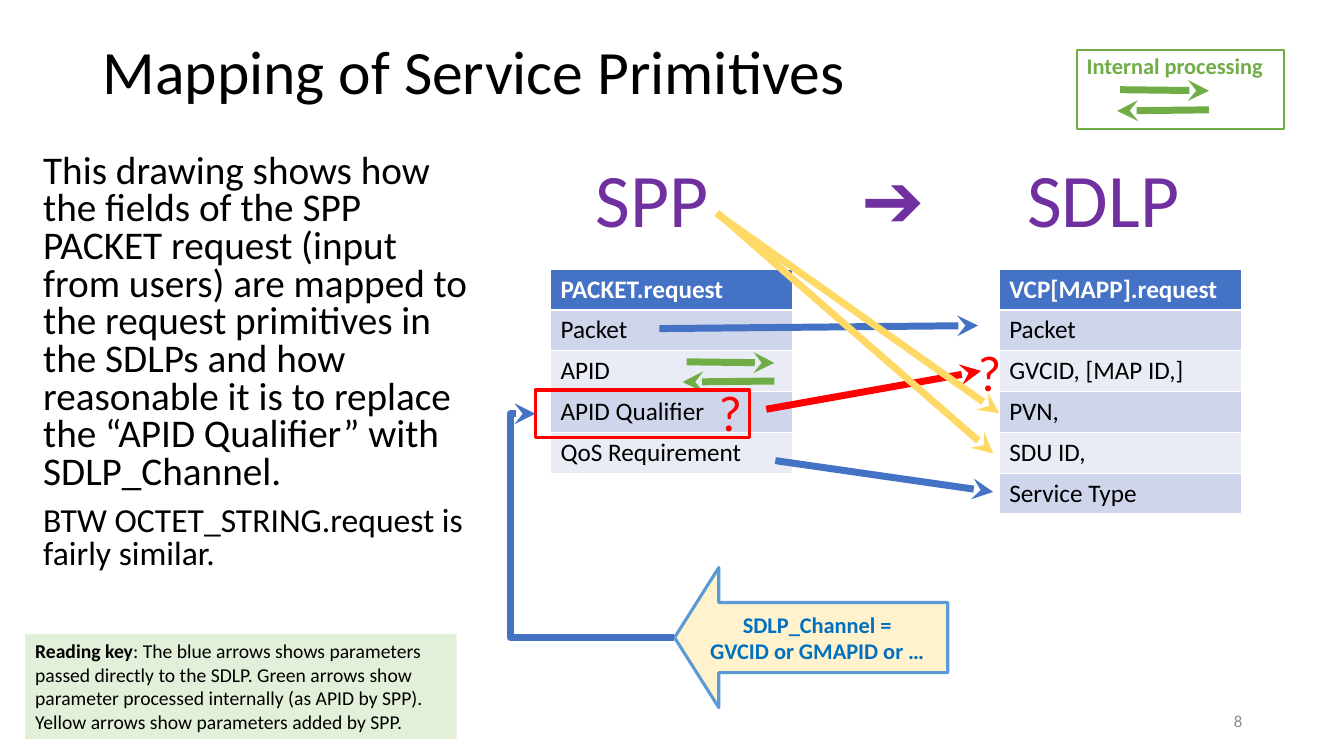
from lxml import etree
from pptx import Presentation
from pptx.dml.color import RGBColor
from pptx.enum.shapes import MSO_CONNECTOR, MSO_SHAPE
from pptx.enum.text import MSO_ANCHOR, PP_ALIGN
from pptx.oxml.ns import qn
from pptx.util import Inches, Pt

STRAIGHT, ELBOW = MSO_CONNECTOR.STRAIGHT, MSO_CONNECTOR.ELBOW
RECT, ARROW = MSO_SHAPE.RECTANGLE, MSO_SHAPE.LEFT_ARROW
TOP, MIDDLE = MSO_ANCHOR.TOP, MSO_ANCHOR.MIDDLE
LEFT, CENTER, RIGHT = PP_ALIGN.LEFT, PP_ALIGN.CENTER, PP_ALIGN.RIGHT

HEX = {
    "black": "000000", "white": "FFFFFF", "gray": "8C8C8C",
    "blue": "4472C4", "green": "70AD47", "red": "FF0000",
    "yellow": "FFD966", "purple": "7030A0", "sky": "0070C0",
    "edge": "5B9BD5", "cream": "FFF2CC", "mint": "E2F0D9",
    "dark": "CFD5EA", "pale": "E9EBF5",
}

# Content
TITLE = "Mapping of Service Primitives"
BODY = [
    ("This drawing shows how the fields of the SPP PACKET request (input from "
     "users) are mapped to the request primitives in the SDLPs and how "
     "reasonable it is to replace the “APID Qualifier” with SDLP_Channel.",
     {"size": 28}),
    ("BTW OCTET_STRING.request is fairly similar.", {"size": 24}),
]
HEADS = "SPP\t➔\tSDLP"
STOPS = [2.64, 4.28]
TABLES = [
    (5.46, ["PACKET.request", "Packet", "APID", "APID Qualifier",
            "QoS Requirement"]),
    (9.91, ["VCP[MAPP].request", "Packet", "GVCID, [MAP ID,]", "PVN,",
            "SDU ID,", "Service Type"]),
]
ARROWS = [
    ("blue", (6.54, 3.26), (9.7, 3.23)),
    ("blue", (7.69, 4.57), (9.85, 4.88)),
    ("green", (6.81, 3.59), (7.68, 3.6)),
    ("green", (7.68, 3.78), (6.77, 3.79)),
    ("red", (7.6, 4.06), (9.73, 3.68)),
    ("yellow", (7.11, 2.12), (9.91, 4.1)),
    ("yellow", (7.11, 2.11), (9.85, 4.5)),
]
LEGEND = [
    ("green", (11.11, 0.89), (11.99, 0.9)),
    ("green", (11.99, 1.09), (11.08, 1.1)),
]
MARKS = [(9.6, 3.4), (7.03, 3.8)]
CHANNEL = ["SDLP_Channel =", "GVCID or GMAPID or …"]
KEY = [
    ("Reading key", {"bold": True}),
    (": The blue arrows shows parameters passed directly to the SDLP. Green "
     "arrows show parameter processed internally (as APID by SPP). Yellow "
     "arrows show parameters added by SPP.", {}),
]
ROW = 0.405

deck = Presentation()
deck.slide_width, deck.slide_height = Inches(13.33), Inches(7.5)
slide = deck.slides.add_slide(deck.slide_layouts[6])
shapes = slide.shapes


def color(name):
    return RGBColor.from_string(HEX[name])


def write(para, text, size=18, hue="black", bold=False, align=LEFT,
          lead=None, gap=None):
    run = para.add_run()
    run.text = text
    run.font.name = "Calibri"
    run.font.size = Pt(size)
    run.font.bold = bold
    run.font.color.rgb = color(hue)
    para.alignment = align
    if lead:
        para.line_spacing = lead
    if gap:
        para.space_before = Pt(gap)


def fill_frame(shape, lines, anchor=TOP, **style):
    frame = shape.text_frame
    frame.word_wrap = True
    frame.vertical_anchor = anchor
    for i, (text, extra) in enumerate(lines):
        para = frame.add_paragraph() if i else frame.paragraphs[0]
        write(para, text, **{**style, **extra})
    return frame


def label(box, lines, **style):
    return fill_frame(shapes.add_textbox(*map(Inches, box)), lines, **style)


def block(kind, box, fill=None, edge=None, width=1):
    shape = shapes.add_shape(kind, *map(Inches, box))
    shape.shadow.inherit = False
    if fill:
        shape.fill.solid()
        shape.fill.fore_color.rgb = color(fill)
    else:
        shape.fill.background()
    if edge:
        shape.line.color.rgb = color(edge)
        shape.line.width = Pt(width)
    else:
        shape.line.fill.background()
    return shape


def link(hue, start, end, kind=STRAIGHT):
    line = shapes.add_connector(kind, *map(Inches, start + end))
    line.line.color.rgb = color(hue)
    line.line.width = Pt(5)
    etree.SubElement(line.line._get_or_add_ln(), qn("a:tailEnd"),
                     type="stealth")
    etree.SubElement(line._element.spPr, qn("a:effectLst"))
    return line


# Title and body
label((0.92, 0.01, 11.5, 1.45), [(TITLE, {})], anchor=MIDDLE, size=44,
      lead=0.9)
label((0.33, 1.48, 4.55, 4.73), BODY, lead=0.8, gap=10)

# Field tables
for left, rows in TABLES:
    grid = shapes.add_table(len(rows), 1, Inches(left), Inches(2.67),
                            Inches(2.4), Inches(ROW * len(rows))).table
    for i, text in enumerate(rows):
        grid.rows[i].height = Inches(ROW)
        cell = grid.cell(i, 0)
        cell.fill.solid()
        shade = ("dark" if i % 2 else "pale") if i else "blue"
        cell.fill.fore_color.rgb = color(shade)
        write(cell.text_frame.paragraphs[0], text, bold=i == 0,
              hue="black" if i else "white")

# Mapping arrows and question marks
for arrow in ARROWS:
    link(*arrow)
for left, top in MARKS:
    label((left, top, 0.48, 0.59), [("?", {})], size=36, hue="red",
          lead=0.9, gap=10)

# Column headings, spread by tab stops
frame = label((5.81, 1.56, 7.11, 0.87), [(HEADS, {})], size=54,
              hue="purple", lead=0.9, gap=10)
props = frame.paragraphs[0]._p.get_or_add_pPr()
tabs = etree.SubElement(props, qn("a:tabLst"))
for stop in STOPS:
    etree.SubElement(tabs, qn("a:tab"), pos=str(Inches(stop)), algn="l")

# Channel callout, joined to the qualifier frame
call = block(ARROW, (6.69, 5.63, 2.71, 1.39), "cream", "edge", 2.25)
call.adjustments[0], call.adjustments[1] = 0.5, 0.316
frame = fill_frame(call, [(text, {}) for text in CHANNEL], anchor=MIDDLE,
                   size=16, hue="sky", bold=True, align=CENTER)
frame.margin_left = 0
focus = block(RECT, (5.31, 3.87, 2.12, 0.47), edge="red", width=2.25)
bend = link("blue", (6.69, 6.32), (5.31, 4.1), ELBOW)
bend.begin_connect(call, 1)
bend.end_connect(focus, 1)
geom = bend._element.spPr.find(qn("a:prstGeom"))
etree.SubElement(geom.find(qn("a:avLst")), qn("a:gd"), name="adj1",
                 fmla="val 118100")

# Legend
for arrow in LEGEND:
    link(*arrow)
fill_frame(block(RECT, (10.68, 0.5, 2.06, 0.78), edge="green", width=1.5),
           [("Internal processing", {})], size=16, hue="green", bold=True,
           lead=0.9, gap=10)

# Reading key
frame = fill_frame(block(RECT, (0.25, 6.29, 4.28, 1.04), "mint"), [])
for text, extra in KEY:
    write(frame.paragraphs[0], text, size=14, **extra)

# Page number
label((9.42, 6.95, 3, 0.4), [("8", {})], anchor=MIDDLE, size=12, hue="gray",
      align=RIGHT)

deck.save("out.pptx")
